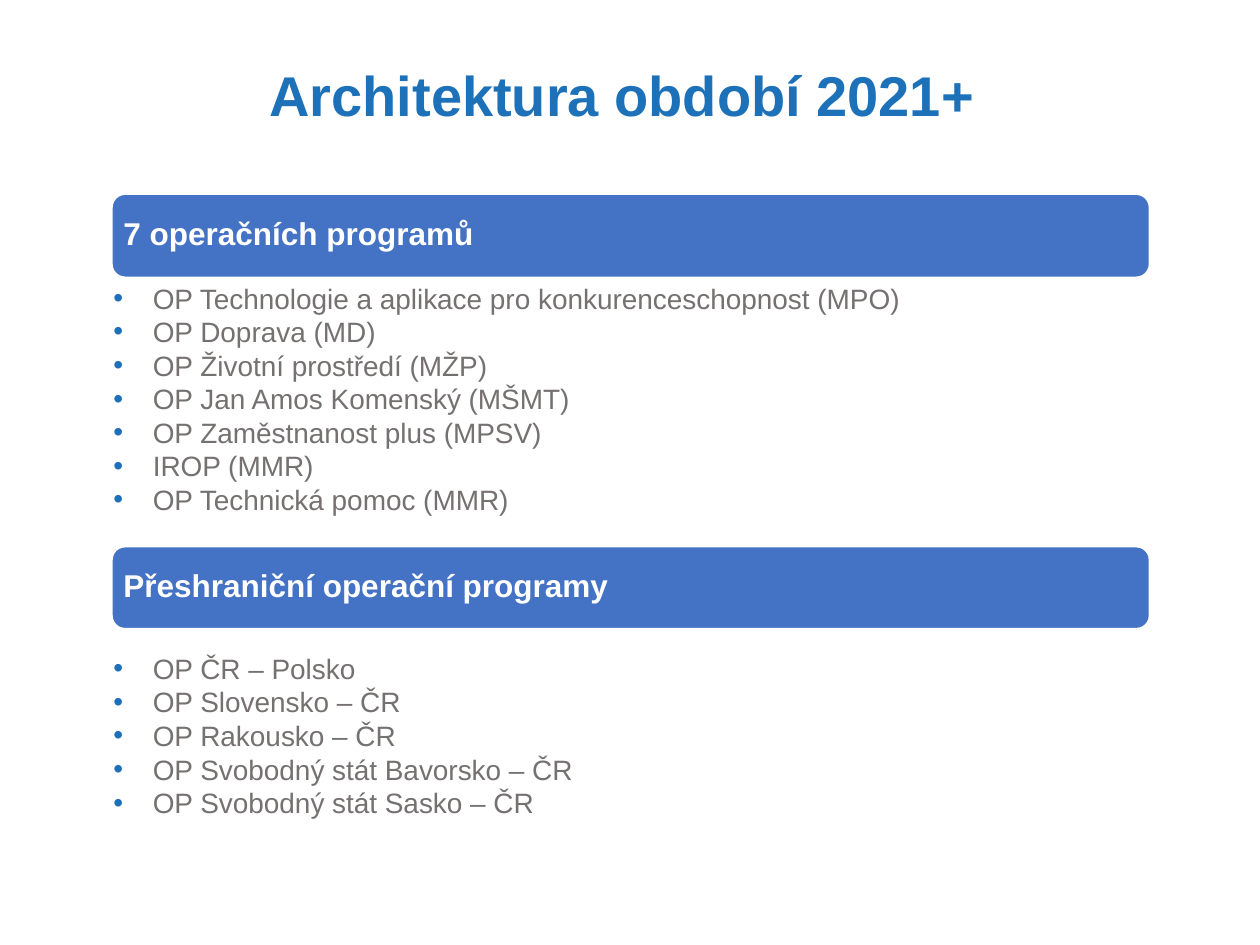
from dataclasses import dataclass

from lxml.etree import SubElement
from pptx import Presentation
from pptx.dml.color import RGBColor
from pptx.enum.shapes import MSO_SHAPE
from pptx.enum.text import MSO_ANCHOR, MSO_AUTO_SIZE, PP_ALIGN
from pptx.oxml.ns import qn
from pptx.shapes.placeholder import SlidePlaceholder
from pptx.slide import Slide
from pptx.text.text import _Paragraph
from pptx.util import Pt


@dataclass(frozen=True)
class Theme:
    font: str = "Arial"
    title_color: RGBColor = RGBColor(0x1D, 0x71, 0xB8)
    bar_color: RGBColor = RGBColor(0x44, 0x72, 0xC4)
    white: RGBColor = RGBColor(0xFF, 0xFF, 0xFF)
    text_color: RGBColor = RGBColor(0x76, 0x71, 0x71)
    bullet_color: str = "1D70B8"
    title_size: Pt = Pt(32)
    heading_size: Pt = Pt(18)
    list_size: Pt = Pt(16)


@dataclass(frozen=True)
class Section:
    heading: str
    bar_top: float
    bar_height: float
    list_top: float
    list_width: float
    list_height: float
    programmes: tuple[str, ...]


THEME = Theme()
BAR_LEFT, BAR_WIDTH = Pt(63.4), Pt(594)
LIST_LEFT = Pt(57.6)
BULLET_INDENT = Pt(22.5)

SECTIONS = (
    Section("7 operačních programů", 110.4, 48.6, 157, 620.6, 179.3, (
        "OP Technologie a aplikace pro konkurenceschopnost (MPO)",
        "OP Doprava (MD)",
        "OP Životní prostředí (MŽP)",
        "OP Jan Amos Komenský (MŠMT)",
        "OP Zaměstnanost plus (MPSV)",
        "IROP (MMR)",
        "OP Technická pomoc (MMR)",
    )),
    Section("Přeshraniční operační programy", 311.8, 48, 368.6, 529.9, 121, (
        "OP ČR – Polsko",
        "OP Slovensko – ČR",
        "OP Rakousko – ČR",
        "OP Svobodný stát Bavorsko – ČR",
        "OP Svobodný stát Sasko – ČR",
    )),
)


def style(paragraph: _Paragraph, size: Pt, color: RGBColor, bold: bool = False) -> None:
    font = paragraph.font
    font.name, font.size, font.bold = THEME.font, size, bold
    font.color.rgb = color


def add_bullet(paragraph: _Paragraph) -> None:
    properties = paragraph._p.get_or_add_pPr()
    properties.set("marL", str(BULLET_INDENT))
    properties.set("indent", str(-BULLET_INDENT))
    color = SubElement(properties, qn("a:buClr"))
    SubElement(color, qn("a:srgbClr"), val=THEME.bullet_color)
    SubElement(properties, qn("a:buFont"), typeface=THEME.font)
    SubElement(properties, qn("a:buChar"), char="•")


def place_title(title: SlidePlaceholder, text: str) -> None:
    title.left, title.top = Pt(49.7), Pt(-20.9)
    title.width, title.height = Pt(620.6), Pt(154)
    frame = title.text_frame
    frame.text = text
    frame.auto_size = MSO_AUTO_SIZE.NONE
    frame.vertical_anchor = MSO_ANCHOR.MIDDLE
    paragraph = frame.paragraphs[0]
    paragraph.alignment = PP_ALIGN.CENTER
    paragraph.line_spacing = 0.9
    style(paragraph, THEME.title_size, THEME.title_color, bold=True)


def draw_heading_bar(slide: Slide, section: Section) -> None:
    bar = slide.shapes.add_shape(MSO_SHAPE.ROUNDED_RECTANGLE, BAR_LEFT, Pt(section.bar_top),
                                 BAR_WIDTH, Pt(section.bar_height))
    bar.shadow.inherit = False
    bar.fill.solid()
    bar.fill.fore_color.rgb = THEME.bar_color
    bar.line.color.rgb = THEME.white
    bar.line.width = Pt(2)
    frame = bar.text_frame
    frame.text = section.heading
    frame.margin_left = Pt(4.8)
    frame.vertical_anchor = MSO_ANCHOR.MIDDLE
    paragraph = frame.paragraphs[0]
    paragraph.alignment = PP_ALIGN.LEFT
    paragraph.line_spacing = 0.9
    style(paragraph, THEME.heading_size, THEME.white, bold=True)


def place_list(body: SlidePlaceholder, section: Section) -> None:
    body.left, body.top = LIST_LEFT, Pt(section.list_top)
    body.width, body.height = Pt(section.list_width), Pt(section.list_height)
    frame = body.text_frame
    frame.text = "\n".join(section.programmes)
    frame.auto_size = MSO_AUTO_SIZE.NONE
    for paragraph in frame.paragraphs:
        paragraph.space_before = Pt(0)
        add_bullet(paragraph)
        style(paragraph, THEME.list_size, THEME.text_color)


def main() -> None:
    presentation = Presentation()
    presentation.slide_width, presentation.slide_height = Pt(720), Pt(540)
    two_content = presentation.slide_layouts.get_by_name("Two Content")
    slide = presentation.slides.add_slide(two_content)
    title, *bodies = slide.placeholders
    place_title(title, "Architektura období 2021+ ")
    for section, body in zip(SECTIONS, bodies):
        draw_heading_bar(slide, section)
        place_list(body, section)
    presentation.save("out.pptx")


if __name__ == "__main__":
    main()
